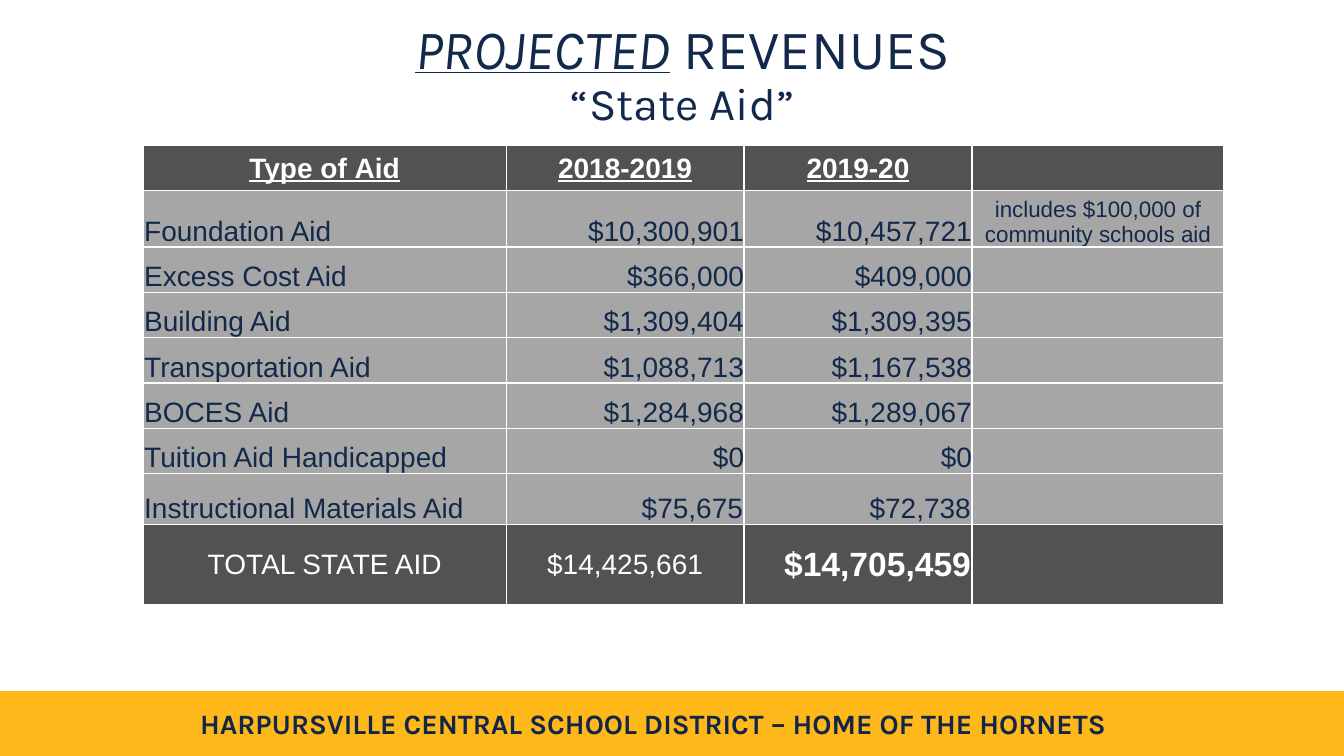
"""Build the projected state aid revenue slide."""
from lxml.etree import SubElement
from pptx import Presentation
from pptx.dml.color import RGBColor
from pptx.enum.shapes import MSO_SHAPE
from pptx.enum.text import MSO_ANCHOR, PP_ALIGN
from pptx.oxml import parse_xml
from pptx.oxml.ns import nsdecls, qn
from pptx.util import Inches, Pt

NAVY = RGBColor(0x13, 0x29, 0x4B)
INK = RGBColor(0x13, 0x26, 0x49)
GOLD = RGBColor(0xFF, 0xB8, 0x19)
WHITE = RGBColor(0xFF, 0xFF, 0xFF)
DARK = RGBColor(0x52, 0x52, 0x52)
GRAY = RGBColor(0xA6, 0xA6, 0xA6)

WIDTHS = [3.6, 2.36, 2.26, 2.5]
HEIGHTS = [0.45, 0.56] + [0.45] * 5 + [0.5, 0.8]
HEADER = ["Type of\u00a0Aid", "2018-2019", "2019-20", ""]
AIDS = [
    ["Foundation Aid", "$10,300,901", "$10,457,721",
     "includes $100,000 of community schools aid"],
    ["Excess Cost Aid", "$366,000", "$409,000", ""],
    ["Building Aid", "$1,309,404", "$1,309,395", ""],
    ["Transportation Aid", "$1,088,713", "$1,167,538", ""],
    ["BOCES Aid", "$1,284,968", "$1,289,067", ""],
    ["Tuition Aid Handicapped", "$0", "$0", ""],
    ["Instructional Materials Aid", "$75,675", "$72,738", ""],
]
TOTAL = ["TOTAL STATE AID", "$14,425,661", "$14,705,459", ""]
LEFT, MID, RIGHT = PP_ALIGN.LEFT, PP_ALIGN.CENTER, PP_ALIGN.RIGHT


def write(para, text, size=20, face="Arial", color=NAVY, bold=False,
          italic=False, under=False, align=MID):
    """Add a formatted run to a paragraph."""
    para.alignment = align
    run = para.add_run()
    run.text = text
    font = run.font
    font.size, font.name = Pt(size), face
    font.bold, font.italic, font.underline = bold, italic, under
    font.color.rgb = color


def add_title(slide):
    """Place and fill the title."""
    title = slide.shapes.title
    title.left, title.top = Inches(1.02), Inches(0.23)
    title.width, title.height = Inches(11.5), Inches(1.04)
    title.fill.solid()
    title.fill.fore_color.rgb = WHITE
    title.text_frame.vertical_anchor = MSO_ANCHOR.MIDDLE
    para = title.text_frame.paragraphs[0]
    para.line_spacing = 0.9
    write(para, "PROJECTED", size=39.6, face="Karla", italic=True, under=True)
    write(para, " REVENUES", size=39.6, face="Karla")
    para.add_line_break()
    write(para, "“State Aid”", size=32.4, face="Karla")


def add_banner(slide):
    """Draw the gold band and its motto."""
    band = slide.shapes.add_shape(MSO_SHAPE.RECTANGLE, 0, Inches(6.86),
                                  Inches(13.33), Inches(0.63))
    band.shadow.inherit = False
    band.fill.solid()
    band.fill.fore_color.rgb = GOLD
    band.line.color.rgb = GOLD
    band.line.width = Pt(1)
    box = slide.shapes.add_textbox(Inches(1.76), Inches(6.96),
                                   Inches(9.44), Inches(0.44))
    box.text_frame.word_wrap = True
    write(box.text_frame.paragraphs[0],
          "HARPURSVILLE CENTRAL SCHOOL DISTRICT – HOME OF THE HORNETS",
          face="Karla", color=INK, bold=True)


def add_edges(cell):
    """Give a cell thin white borders."""
    props = cell._tc.get_or_add_tcPr()
    for side in ("lnL", "lnR", "lnT", "lnB"):
        edge = parse_xml(f'<a:{side} {nsdecls("a")} w="{Pt(1)}"/>')
        fill = SubElement(edge, qn("a:solidFill"))
        SubElement(fill, qn("a:srgbClr")).set("val", str(WHITE))
        props.append(edge)


def fill_cell(cell, text, fill, anchor, pad=0.01, **style):
    """Style a cell and write its text."""
    add_edges(cell)
    cell.fill.solid()
    cell.fill.fore_color.rgb = fill
    cell.vertical_anchor = anchor
    cell.margin_left = cell.margin_right = cell.margin_top = Inches(pad)
    cell.margin_bottom = 0
    if text:
        write(cell.text_frame.paragraphs[0], text, **style)


def add_aid(slide):
    """Build the state aid table."""
    table = slide.shapes.add_table(
        len(HEIGHTS), len(WIDTHS), Inches(1.42), Inches(1.44),
        Inches(sum(WIDTHS)), Inches(sum(HEIGHTS))).table
    table.horz_banding = False
    for col, width in zip(table.columns, WIDTHS):
        col.width = Inches(width)
    for row, height in zip(table.rows, HEIGHTS):
        row.height = Inches(height)
    last = len(HEIGHTS) - 1
    for c, text in enumerate(HEADER):
        fill_cell(table.cell(0, c), text, DARK, MSO_ANCHOR.MIDDLE,
                  color=WHITE, bold=True, under=True)
    for r, row in enumerate(AIDS, 1):
        for c, text in enumerate(row):
            flush = c in (1, 2) and r < last - 1
            fill_cell(table.cell(r, c), text, GRAY, MSO_ANCHOR.BOTTOM,
                      pad=0 if flush else 0.01, size=16 if c == 3 else 20,
                      align=(LEFT, RIGHT, RIGHT, MID)[c])
    for c, text in enumerate(TOTAL):
        new = c == 2
        fill_cell(table.cell(last, c), text, DARK, MSO_ANCHOR.MIDDLE,
                  color=WHITE, size=24 if new else 20, bold=new,
                  align=RIGHT if new else MID)


def main():
    """Assemble and save the slide."""
    deck = Presentation()
    deck.slide_width, deck.slide_height = Inches(13.33), Inches(7.5)
    slide = deck.slides.add_slide(deck.slide_layouts[5])
    add_banner(slide)
    add_title(slide)
    add_aid(slide)
    deck.save("out.pptx")


if __name__ == "__main__":
    main()
